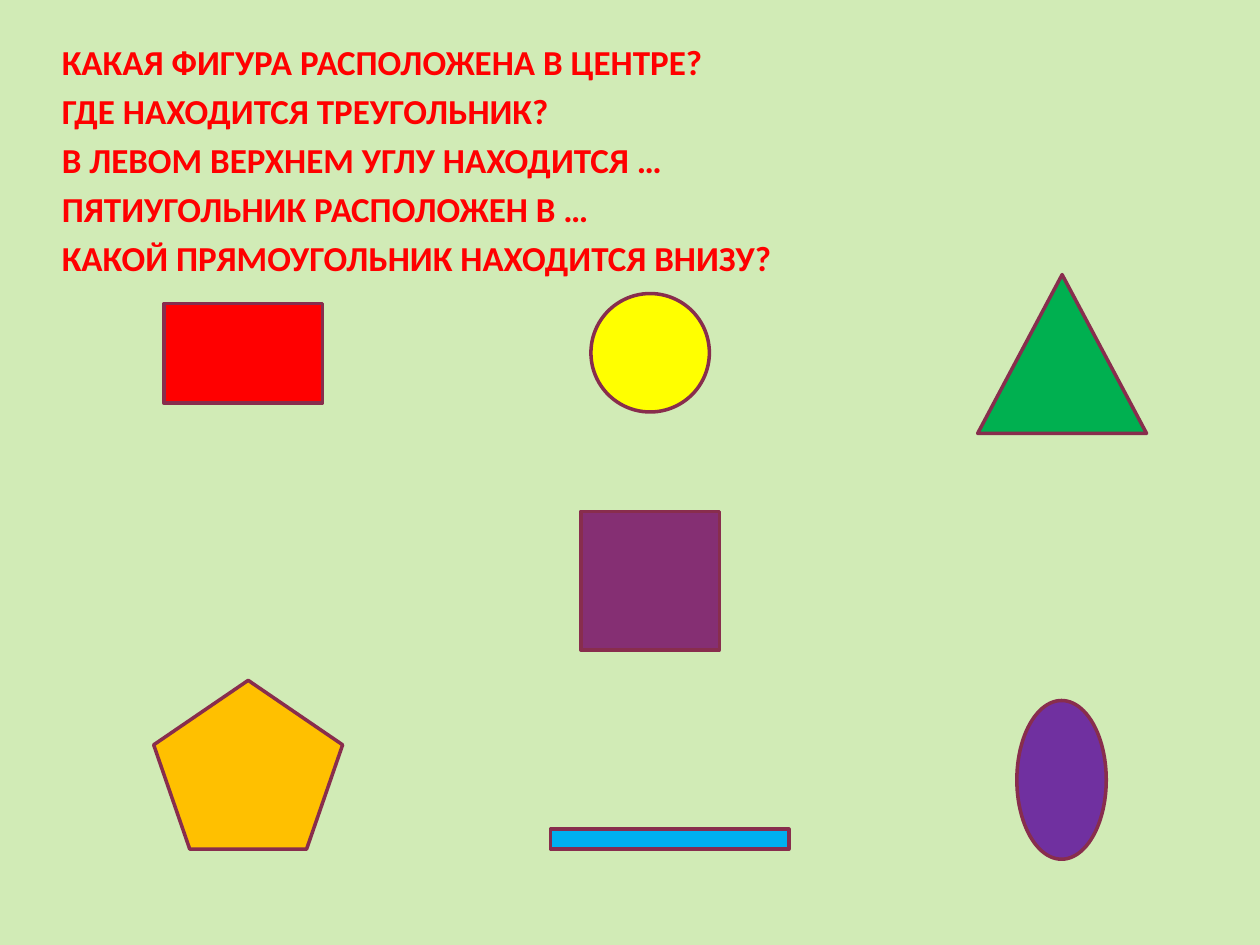
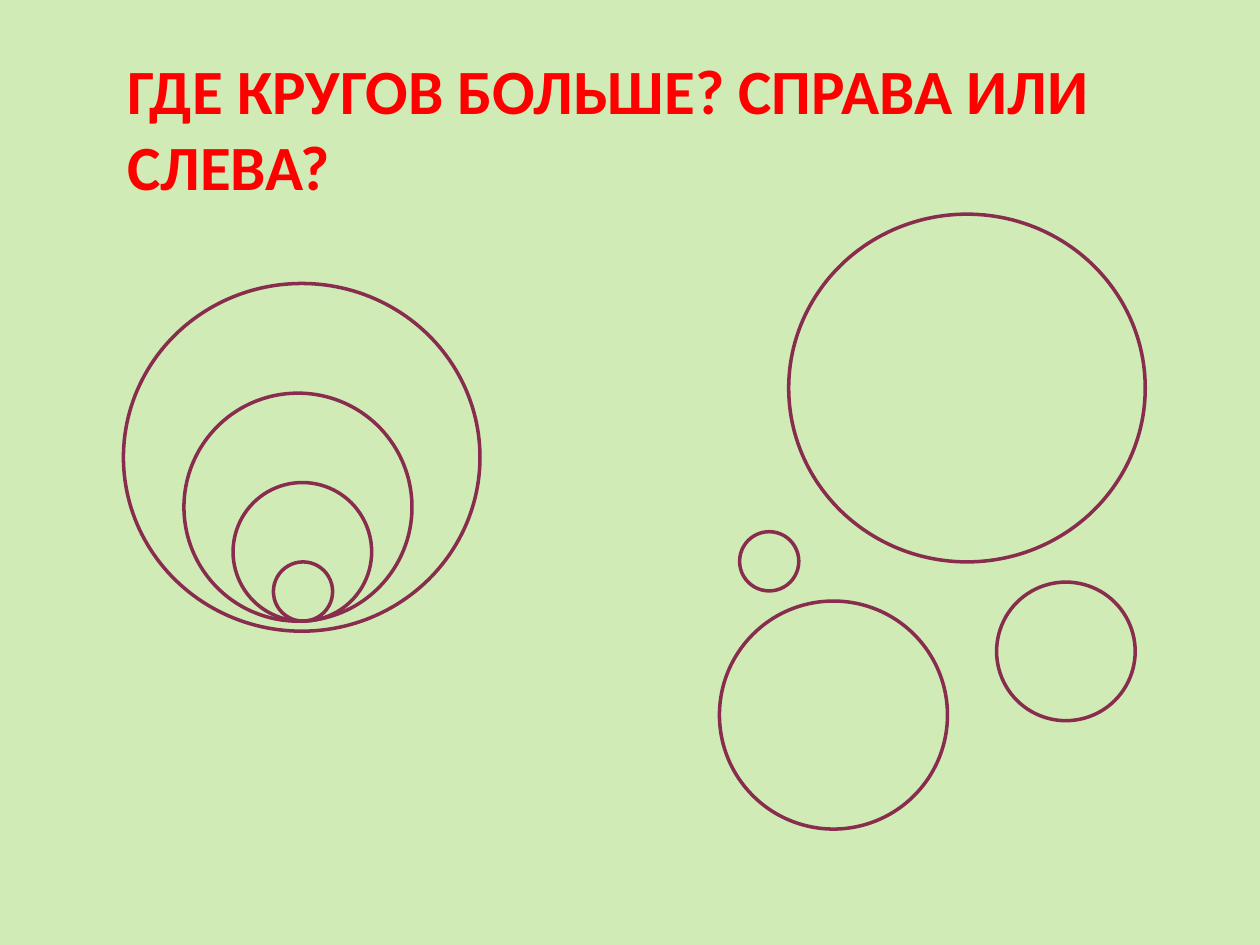
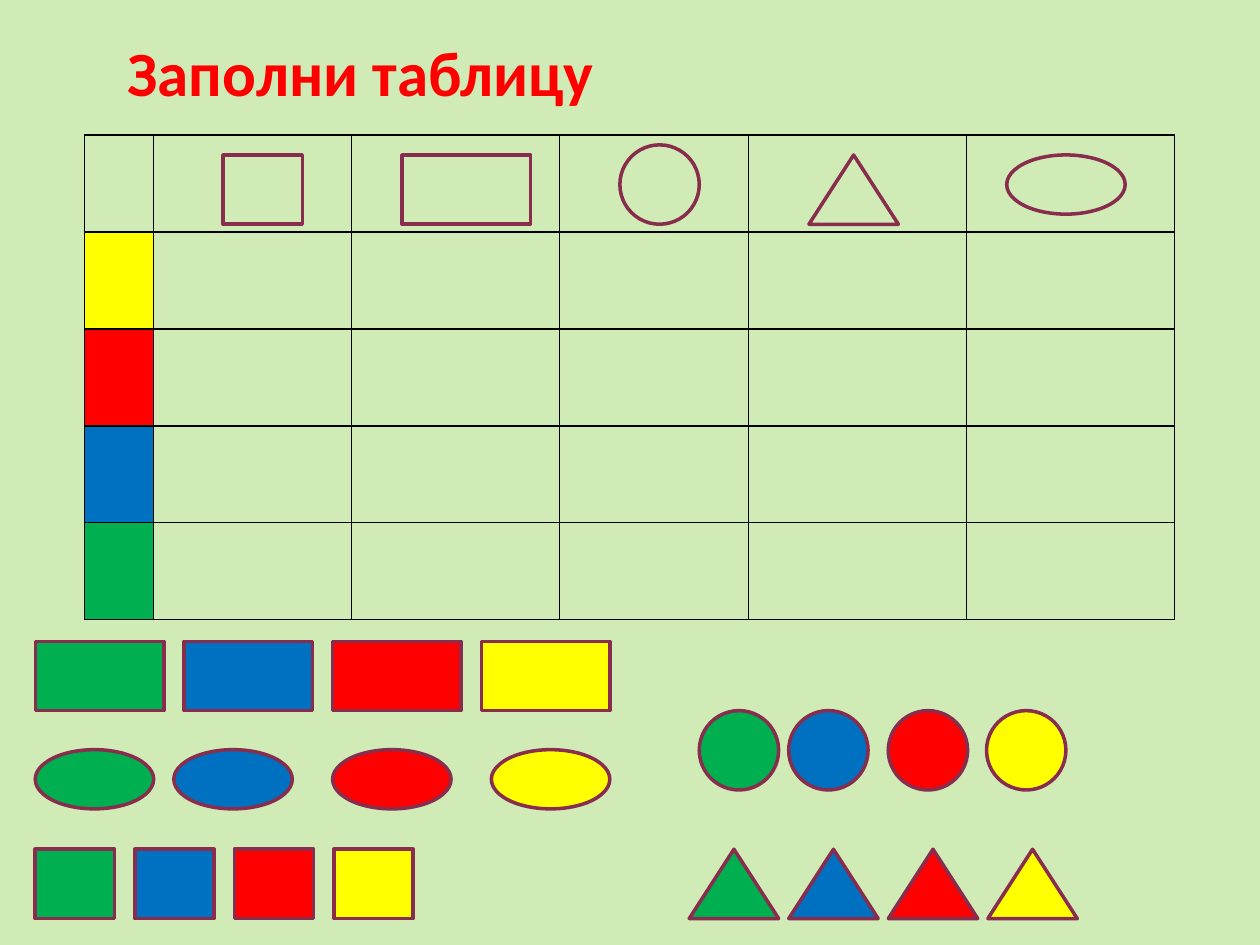
from dataclasses import dataclass

from lxml.etree import SubElement
from pptx import Presentation
from pptx.dml.color import RGBColor
from pptx.enum.shapes import MSO_SHAPE
from pptx.enum.text import MSO_ANCHOR, MSO_AUTO_SIZE, PP_ALIGN
from pptx.oxml.ns import qn
from pptx.util import Inches, Pt


@dataclass(frozen=True)
class Theme:
    font: str = "Calibri"
    title_size: int = 36
    question_size: int = 20
    outline_width: int = 2
    border_width: int = 1
    background: str = "D1EBB6"
    text: str = "FF0000"
    outline: str = "882D4D"
    border: str = "000000"
    yellow: str = "FFFF00"
    red: str = "FF0000"
    blue: str = "0070C0"
    green: str = "00B050"
    plum: str = "852F73"
    sky: str = "00B0F0"
    violet: str = "7030A0"
    orange: str = "FFC000"


THEME = Theme()
TITLE_AND_CONTENT, TITLE_ONLY = 1, 5

RECTANGLE = MSO_SHAPE.RECTANGLE
ELLIPSE = MSO_SHAPE.OVAL
TRIANGLE = MSO_SHAPE.ISOSCELES_TRIANGLE
PENTAGON = MSO_SHAPE.REGULAR_PENTAGON

QUESTIONS = [
    "КАКАЯ ФИГУРА РАСПОЛОЖЕНА В ЦЕНТРЕ?",
    "ГДЕ НАХОДИТСЯ ТРЕУГОЛЬНИК?",
    "В ЛЕВОМ ВЕРХНЕМ УГЛУ НАХОДИТСЯ …",
    "ПЯТИУГОЛЬНИК РАСПОЛОЖЕН В …",
    "КАКОЙ ПРЯМОУГОЛЬНИК НАХОДИТСЯ ВНИЗУ?",
]

# kind, left, top, width, height, fill
SCATTERED_FIGURES = [
    (RECTANGLE, 4.61, 4.06, 1.1, 1.1, THEME.plum),
    (RECTANGLE, 1.3, 2.41, 1.26, 0.79, THEME.red),
    (RECTANGLE, 4.37, 6.58, 1.89, 0.16, THEME.sky),
    (ELLIPSE, 4.69, 2.33, 0.94, 0.94, THEME.yellow),
    (ELLIPSE, 8.07, 5.56, 0.71, 1.26, THEME.violet),
    (PENTAGON, 1.22, 5.4, 1.5, 1.34, THEME.orange),
    (TRIANGLE, 7.76, 2.18, 1.34, 1.26, THEME.green),
]

# width, height, place in the left group, place in the right group
CIRCLE_PAIRS = [
    (2.83, 2.76, (0.98, 2.25), (6.26, 1.7)),
    (1.81, 1.81, (1.46, 3.12), (5.71, 4.77)),
    (1.1, 1.1, (1.85, 3.83), (7.91, 4.62)),
    (0.47, 0.47, (2.17, 4.46), (5.87, 4.22)),
]

ROW_COLORS = [THEME.yellow, THEME.red, THEME.blue, THEME.green]
COLUMN_WIDTHS = [0.55, 1.57, 1.65, 1.5, 1.73, 1.65]
ROW_HEIGHT = 0.77


def evenly(start, pitch):
    """Left edges of one figure per row colour."""
    return [start + pitch * index for index in range(len(ROW_COLORS))]


# kind, width, height, place in the header row, lefts and top of the coloured set
SORTING_FIGURES = [
    (RECTANGLE, 0.63, 0.55, (1.77, 1.23), evenly(0.28, 0.79), 6.74),
    (RECTANGLE, 1.02, 0.55, (3.19, 1.23), evenly(0.28, 1.18), 5.09),
    (ELLIPSE, 0.63, 0.63, (4.92, 1.15), [5.55, 6.26, 7.05, 7.83], 5.64),
    (TRIANGLE, 0.71, 0.55, (6.42, 1.23), evenly(5.47, 0.79), 6.74),
    (ELLIPSE, 0.94, 0.47, (7.99, 1.23), [0.28, 1.38, 2.64, 3.9], 5.95),
]


def color(value):
    return RGBColor.from_string(value)


def set_background(presentation):
    fill = presentation.slide_master.background.fill
    fill.solid()
    fill.fore_color.rgb = color(THEME.background)


def fill_placeholder(placeholder, box, lines, size, anchor):
    """Place a placeholder and set its lines in the shared bold red style."""
    placeholder.left, placeholder.top, placeholder.width, placeholder.height = map(Inches, box)
    text_frame = placeholder.text_frame
    text_frame.text = "\n".join(lines)
    text_frame.word_wrap = True
    text_frame.auto_size = MSO_AUTO_SIZE.NONE
    text_frame.vertical_anchor = anchor
    for paragraph in text_frame.paragraphs:
        paragraph.alignment = PP_ALIGN.LEFT
        for run in paragraph.runs:
            run.font.name = THEME.font
            run.font.size = Pt(size)
            run.font.bold = True
            run.font.color.rgb = color(THEME.text)


def add_title(slide, text, box, anchor):
    fill_placeholder(slide.shapes.title, box, [text], THEME.title_size, anchor)


def add_questions(slide, lines, box):
    body = slide.placeholders[1]
    fill_placeholder(body, box, lines, THEME.question_size, MSO_ANCHOR.BOTTOM)
    for paragraph in body.text_frame.paragraphs:
        paragraph.space_before = Pt(THEME.question_size * 0.2)
        properties = paragraph._p.get_or_add_pPr()
        properties.set("marL", "0")
        properties.set("indent", "0")
        SubElement(properties, qn("a:buNone"))


def add_figure(slide, kind, left, top, width, height, fill=None):
    """Add an outlined figure, hollow when no fill is given."""
    shape = slide.shapes.add_shape(kind, *map(Inches, (left, top, width, height)))
    shape.shadow.inherit = False
    shape.line.color.rgb = color(THEME.outline)
    shape.line.width = Pt(THEME.outline_width)
    if fill:
        shape.fill.solid()
        shape.fill.fore_color.rgb = color(fill)
    else:
        shape.fill.background()


def add_cell_borders(cell):
    properties = cell._tc.get_or_add_tcPr()
    for side in ("a:lnL", "a:lnR", "a:lnT", "a:lnB"):
        line = SubElement(properties, qn(side), w=str(Pt(THEME.border_width)))
        solid_fill = SubElement(line, qn("a:solidFill"))
        SubElement(solid_fill, qn("a:srgbClr"), val=THEME.border)


def add_sorting_table(slide, left, top):
    """Add the empty grid whose first column shows the row colours."""
    row_count = len(ROW_COLORS) + 1
    table = slide.shapes.add_table(
        row_count, len(COLUMN_WIDTHS), Inches(left), Inches(top),
        Inches(sum(COLUMN_WIDTHS)), Inches(ROW_HEIGHT * row_count),
    ).table
    table.first_row = False
    table.horz_banding = False
    for column, width in zip(table.columns, COLUMN_WIDTHS):
        column.width = Inches(width)
    for row in table.rows:
        row.height = Inches(ROW_HEIGHT)
    for cell in table.iter_cells():
        add_cell_borders(cell)
        cell.fill.background()
    for row_index, row_color in enumerate(ROW_COLORS, start=1):
        fill = table.cell(row_index, 0).fill
        fill.solid()
        fill.fore_color.rgb = color(row_color)


def add_slide(presentation, layout_index):
    return presentation.slides.add_slide(presentation.slide_layouts[layout_index])


def build_position_slide(presentation):
    slide = add_slide(presentation, TITLE_AND_CONTENT)
    title = slide.shapes.title.element
    title.getparent().remove(title)
    add_questions(slide, QUESTIONS, (0.39, 0.31, 9.3, 1.95))
    for figure in SCATTERED_FIGURES:
        add_figure(slide, *figure)


def build_circles_slide(presentation):
    slide = add_slide(presentation, TITLE_ONLY)
    add_title(slide, "ГДЕ КРУГОВ БОЛЬШЕ? СПРАВА ИЛИ СЛЕВА?",
              (0.91, 0.36, 8.5, 0.71), MSO_ANCHOR.TOP)
    for width, height, *places in CIRCLE_PAIRS:
        for left, top in places:
            add_figure(slide, ELLIPSE, left, top, width, height)


def build_sorting_slide(presentation):
    slide = add_slide(presentation, TITLE_ONLY)
    add_title(slide, "Заполни таблицу", (0.91, 0.13, 8.5, 0.79), MSO_ANCHOR.BOTTOM)
    add_sorting_table(slide, 0.67, 1.07)
    for kind, width, height, header_place, lefts, top in SORTING_FIGURES:
        add_figure(slide, kind, *header_place, width, height)
        for left, fill in zip(lefts, reversed(ROW_COLORS)):
            add_figure(slide, kind, left, top, width, height, fill)


def main():
    presentation = Presentation()
    presentation.slide_width = Inches(10)
    presentation.slide_height = Inches(7.5)
    set_background(presentation)
    build_position_slide(presentation)
    build_circles_slide(presentation)
    build_sorting_slide(presentation)
    presentation.save("out.pptx")


if __name__ == "__main__":
    main()
